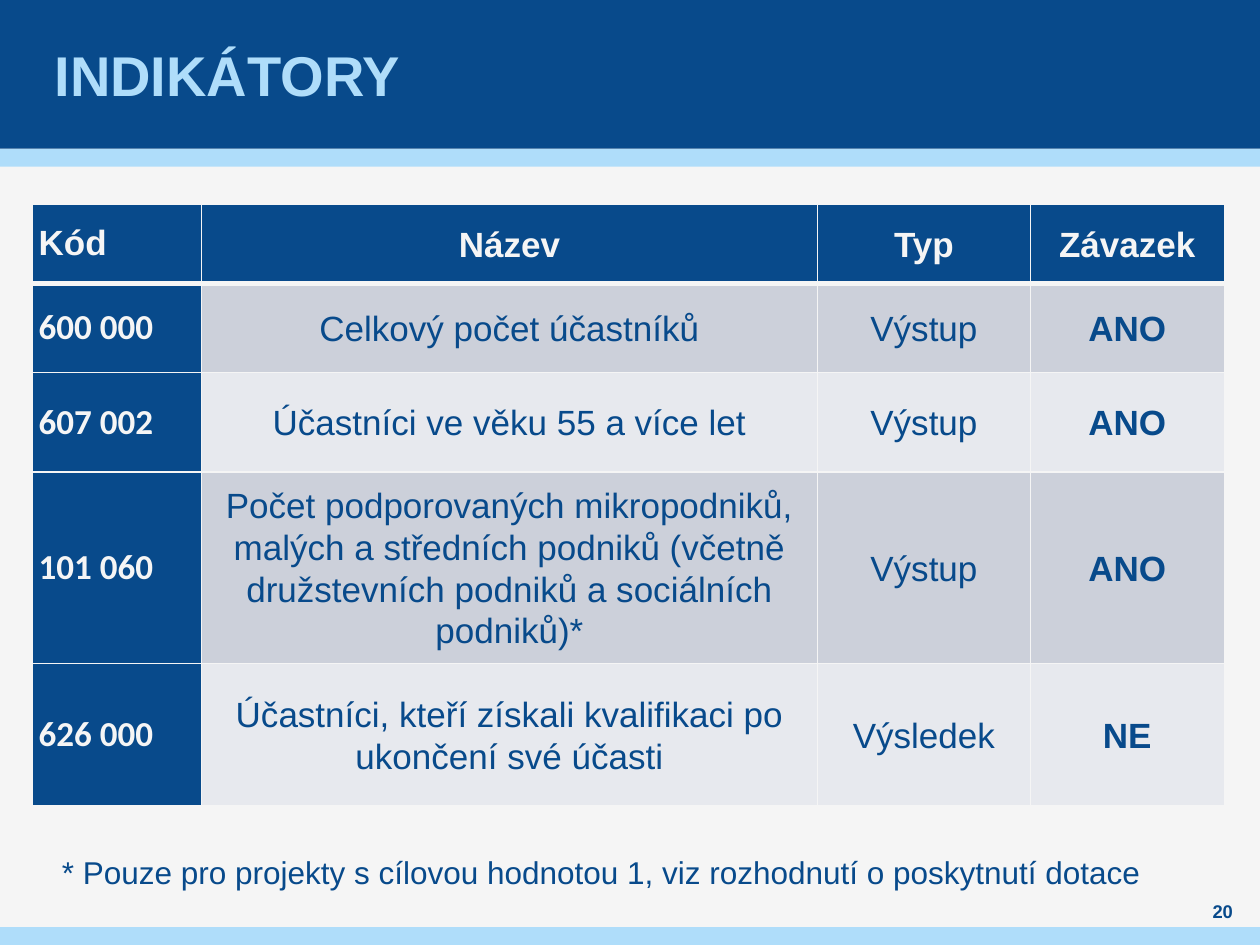
from dataclasses import dataclass

from lxml.etree import SubElement
from pptx import Presentation
from pptx.dml.color import RGBColor
from pptx.enum.shapes import MSO_SHAPE
from pptx.enum.text import MSO_ANCHOR, PP_ALIGN
from pptx.oxml.ns import qn
from pptx.util import Cm, Pt

NAVY = RGBColor(0x08, 0x4A, 0x8B)
SKY = RGBColor(0xAF, 0xDD, 0xFA)
PAPER = RGBColor(0xF5, 0xF5, 0xF5)
ROW_FILLS = (RGBColor(0xCC, 0xD0, 0xDA), RGBColor(0xE7, 0xE9, 0xEE))


@dataclass
class Band:
    top: float
    height: float
    color: RGBColor


@dataclass
class Indicator:
    code: str
    name: str
    kind: str
    binding: str
    height: float


BANDS = [Band(3, 0.36, SKY), Band(0, 3, NAVY), Band(18.69, 0.36, SKY)]
ROWS = [
    Indicator("Kód", "Název", "Typ", "Závazek", 1.6),
    Indicator("600 000", "Celkový počet účastníků", "Výstup", "ANO", 1.8),
    Indicator("607 002", "Účastníci ve věku 55 a více let", "Výstup", "ANO", 2),
    Indicator("101 060", "Počet podporovaných mikropodniků, malých a středních podniků "
              "(včetně družstevních podniků a sociálních podniků)*", "Výstup", "ANO", 2.77),
    Indicator("626 000", "Účastníci, kteří získali kvalifikaci po ukončení své účasti",
              "Výsledek", "NE", 2.87),
]
COLUMN_WIDTHS = (3.4, 12.42, 4.29, 3.91)


def write(tf, text: str, *, size: float, color: RGBColor = NAVY, bold: bool = False,
          font: str = "Arial", align=PP_ALIGN.LEFT, before: float = 0,
          after: float = 0, spacing: float = 1.0) -> None:
    p = tf.paragraphs[0]
    p.alignment = align
    p.space_before, p.space_after = Pt(before), Pt(after)
    p.line_spacing = spacing
    r = p.add_run()
    r.text = text
    r.font.name, r.font.size, r.font.bold = font, Pt(size), bold
    r.font.color.rgb = color


def add_band(s, band: Band, width: int) -> None:
    sp = s.shapes.add_shape(MSO_SHAPE.RECTANGLE, 0, Cm(band.top), width, Cm(band.height))
    sp.shadow.inherit = False
    sp.fill.solid()
    sp.fill.fore_color.rgb = band.color
    sp.line.fill.background()


def add_text(s, text: str, left: float, top: float, width: float, height: float, *,
             anchor=MSO_ANCHOR.MIDDLE, wrap: bool = True, inset_x: float = 0,
             inset_y: float = 0, **style) -> None:
    tf = s.shapes.add_textbox(Cm(left), Cm(top), Cm(width), Cm(height)).text_frame
    tf.word_wrap = wrap
    tf.vertical_anchor = anchor
    tf.margin_left = tf.margin_right = Cm(inset_x)
    tf.margin_top = tf.margin_bottom = Cm(inset_y)
    write(tf, text, **style)


def set_borders(cell, widths: dict[str, float]) -> None:
    tcPr = cell._tc.get_or_add_tcPr()
    for i, (side, width) in enumerate(widths.items()):
        ln = SubElement(tcPr, qn(f"a:ln{side}"), w=str(Pt(width)))
        fill = SubElement(ln, qn("a:solidFill"))
        SubElement(fill, qn("a:srgbClr"), val=str(PAPER))
        tcPr.insert(i, ln)


def add_indicator_table(s, left: float, top: float) -> None:
    table = s.shapes.add_table(len(ROWS), len(COLUMN_WIDTHS), Cm(left), Cm(top),
                               Cm(sum(COLUMN_WIDTHS)),
                               Cm(sum(row.height for row in ROWS))).table
    for column, width in zip(table.columns, COLUMN_WIDTHS):
        column.width = Cm(width)
    for i, row in enumerate(ROWS):
        table.rows[i].height = Cm(row.height)
        header = i == 0
        for j, text in enumerate((row.code, row.name, row.kind, row.binding)):
            cell = table.cell(i, j)
            dark = header or j == 0
            cell.fill.solid()
            cell.fill.fore_color.rgb = NAVY if dark else ROW_FILLS[(i - 1) % 2]
            cell.vertical_anchor = MSO_ANCHOR.MIDDLE
            cell.margin_left = cell.margin_right = Cm(0.12)
            cell.margin_top = cell.margin_bottom = Cm(0.12)
            set_borders(cell, {"L": 1, "R": 1, "T": 3 if i == 1 else 1,
                               "B": 3 if header else 1})
            code = j == 0 and not header
            write(cell.text_frame, text, size=20, color=PAPER if dark else NAVY,
                  bold=dark or j == 3, font="Calibri" if code else "Arial",
                  align=PP_ALIGN.CENTER if j else PP_ALIGN.LEFT,
                  before=3 if code else 0, after=3 if code else 8,
                  spacing=1.07 if j else 1.0)


def main() -> None:
    prs = Presentation()
    prs.slide_width, prs.slide_height = Cm(25.4), Cm(19.05)
    s = prs.slides.add_slide(prs.slide_layouts[6])
    s.background.fill.solid()
    s.background.fill.fore_color.rgb = PAPER
    for band in BANDS:
        add_band(s, band, prs.slide_width)
    add_text(s, "INDIKÁTORY", 1, 0, 23.4, 3, inset_x=0.1, size=32, color=SKY, bold=True)
    add_text(s, "20", 24, 18.11, 1.3, 0.5, size=10.5, bold=True, align=PP_ALIGN.CENTER)
    add_indicator_table(s, 0.66, 4.11)
    add_text(s, "* Pouze pro projekty s cílovou hodnotou 1, viz rozhodnutí o poskytnutí dotace",
             1, 17.07, 22.45, 1.02, anchor=MSO_ANCHOR.TOP, wrap=False,
             inset_x=0.25, inset_y=0.13, size=18)
    prs.save("out.pptx")


if __name__ == "__main__":
    main()
